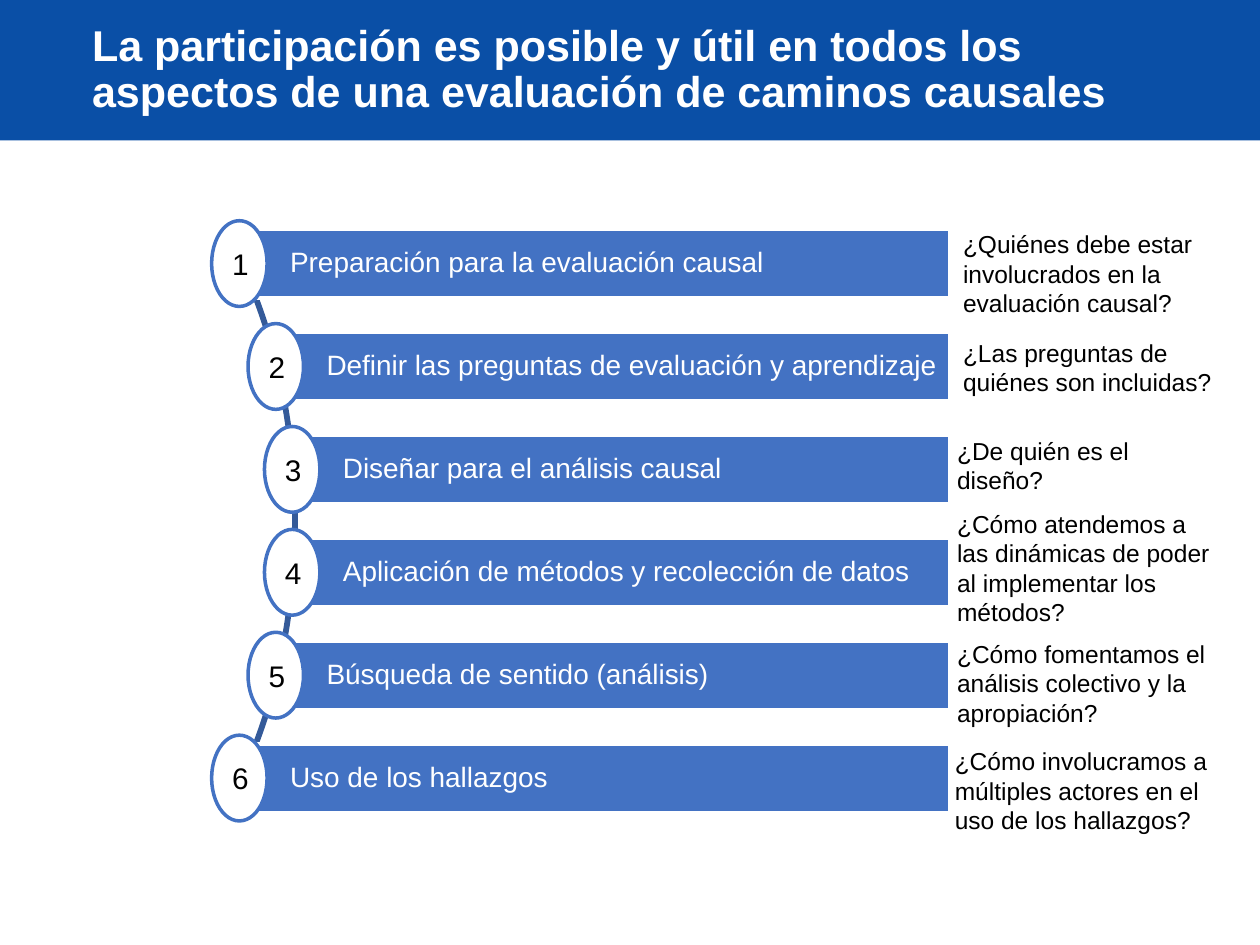
from typing import NamedTuple

from pptx import Presentation
from pptx.dml.color import RGBColor
from pptx.enum.shapes import MSO_SHAPE as SHAPE
from pptx.enum.text import MSO_ANCHOR as ANCHOR, MSO_AUTO_SIZE as AUTO, PP_ALIGN as ALIGN
from pptx.util import Pt

BAND_BLUE = RGBColor(0x0A, 0x4F, 0xA6)
BAR_BLUE = RGBColor(0x43, 0x72, 0xC3)
ARC_BLUE = RGBColor(0x34, 0x5A, 0x99)
WHITE = RGBColor(0xFF, 0xFF, 0xFF)
BLACK = RGBColor(0, 0, 0)

FONT = "Arial"
BAR_TOP, BAR_STEP, BAR_H, BAR_RIGHT = 131, 58.8, 39.2, 543
OVAL_W, OVAL_H = 31.7, 49


class Box(NamedTuple):
    left: float
    top: float
    width: float
    height: float


class Step(NamedTuple):
    label: str
    bar_left: float
    question: str
    question_box: Box


STEPS = [
    Step("Preparación para la evaluación causal", 136.8,
         "¿Quiénes debe estar involucrados en la evaluación causal?",
         Box(543.2, 127.4, 178.6, 58.2)),
    Step("Definir las preguntas de evaluación y aprendizaje", 157.6,
         "¿Las preguntas de quiénes son incluidas?",
         Box(543.2, 189.6, 165, 41.2)),
    Step("Diseñar para el análisis causal", 167,
         "¿De quién es el diseño?",
         Box(539.8, 245.6, 165, 24.3)),
    Step("Aplicación de métodos y recolección de datos", 167,
         "¿Cómo atendemos a las dinámicas de poder al implementar los métodos?",
         Box(539.8, 287.3, 165, 75)),
    Step("Búsqueda de sentido (análisis)", 157.6,
         "¿Cómo fomentamos el análisis colectivo y la apropiación?",
         Box(539.8, 361.6, 165, 58.2)),
    Step("Uso de los hallazgos", 136.8,
         "¿Cómo involucramos a múltiples actores en el uso de los hallazgos?",
         Box(538.5, 422.8, 165, 58.2)),
]


def points(box: Box) -> list[Pt]:
    return [Pt(v) for v in box]


def add_shape(shapes, kind: SHAPE, box: Box, fill: RGBColor | None, line: RGBColor | None):
    sp = shapes.add_shape(kind, *points(box))
    sp.shadow.inherit = False
    if fill is None:
        sp.fill.background()
    else:
        sp.fill.solid()
        sp.fill.fore_color.rgb = fill
    if line is None:
        sp.line.fill.background()
    else:
        sp.line.color.rgb = line
        sp.line.width = Pt(2)
    return sp


def set_text(sp, text: str, size: float, color: RGBColor, insets: Box,
             anchor: ANCHOR = ANCHOR.MIDDLE, spacing: float = 1.0, bold: bool = False) -> None:
    """Write one left-aligned paragraph; insets run left, top, right, bottom."""
    tf = sp.text_frame
    tf.word_wrap = True
    tf.vertical_anchor = anchor
    tf.margin_left, tf.margin_top, tf.margin_right, tf.margin_bottom = points(insets)
    tf.text = text
    p = tf.paragraphs[0]
    p.alignment = ALIGN.LEFT
    p.line_spacing = spacing
    font = p.runs[0].font
    font.name, font.size, font.bold = FONT, Pt(size), bold
    font.color.rgb = color


def add_step(shapes, number: int, step: Step) -> None:
    top = BAR_TOP + (number - 1) * BAR_STEP
    bar = add_shape(shapes, SHAPE.RECTANGLE,
                    Box(step.bar_left, top, BAR_RIGHT - step.bar_left, BAR_H), BAR_BLUE, WHITE)
    set_text(bar, step.label, 16, WHITE, Box(29, 5, 5, 5), spacing=0.9)

    # The oval is centred on the middle of the bar's left side
    oval = add_shape(shapes, SHAPE.OVAL,
                     Box(step.bar_left - OVAL_W / 2, top + (BAR_H - OVAL_H) / 2, OVAL_W, OVAL_H),
                     WHITE, BAR_BLUE)
    set_text(oval, str(number), 17, BLACK, Box(7.2, 7.2, 7.2, 7.2))


def add_question(shapes, step: Step) -> None:
    sp = shapes.add_textbox(*points(step.question_box))
    set_text(sp, step.question, 14, BLACK, Box(7.2, 3.6, 7.2, 3.6), ANCHOR.TOP)


def main() -> None:
    prs = Presentation()
    prs.slide_width, prs.slide_height = Pt(720), Pt(540)
    s = prs.slides.add_slide(prs.slide_layouts[5])
    shapes = s.shapes

    # Header band behind the title
    title = shapes.title
    band = add_shape(shapes, SHAPE.RECTANGLE, Box(0, -0.7, 720, 81), BAND_BLUE, None)
    title._element.addprevious(band._element)
    title.left, title.top, title.width, title.height = points(Box(49, 8.6, 633, 63.4))
    set_text(title, "La participación es posible y útil en todos los aspectos "
             "de una evaluación de caminos causales",
             24.6, WHITE, Box(3.6, 3.6, 3.6, 3.6), spacing=0.9, bold=True)
    title.text_frame.auto_size = AUTO.NONE

    # Arc that links the numbered ovals
    arc = add_shape(shapes, SHAPE.BLOCK_ARC, Box(-153.4, 46.8, 322.6, 501.8), None, ARC_BLUE)
    for i, value in enumerate((189, 27, 0.004)):
        arc.adjustments[i] = value

    # Numbered steps, then the question beside each
    for number, step in enumerate(STEPS, 1):
        add_step(shapes, number, step)
    for step in STEPS:
        add_question(shapes, step)

    prs.save("out.pptx")


if __name__ == "__main__":
    main()
